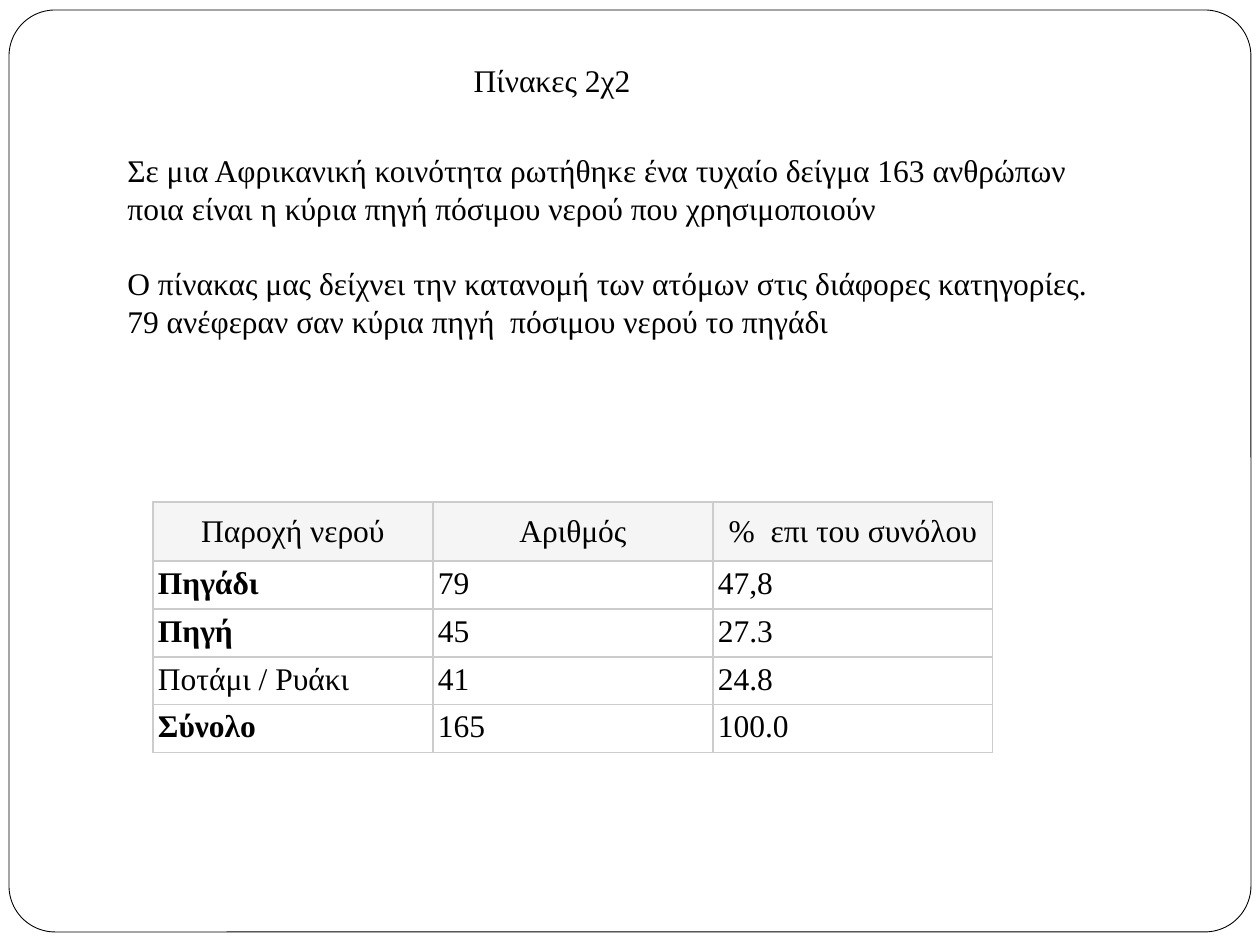
from lxml.etree import SubElement
from pptx import Presentation
from pptx.dml.color import RGBColor
from pptx.enum.shapes import MSO_SHAPE
from pptx.enum.text import MSO_ANCHOR as Anchor, MSO_AUTO_SIZE as AutoSize, PP_ALIGN as Align
from pptx.oxml.ns import qn
from pptx.util import Emu, Pt

TITLE = "Πίνακες 2χ2"
PARAGRAPHS = [
    "Σε μια Αφρικανική κοινότητα ρωτήθηκε ένα τυχαίο δείγμα 163 ανθρώπων "
    "ποια είναι η κύρια πηγή πόσιμου νερού που χρησιμοποιούν",
    "Ο πίνακας μας δείχνει την κατανομή των ατόμων στις διάφορες κατηγορίες. "
    "79 ανέφεραν σαν κύρια πηγή  πόσιμου νερού το πηγάδι",
]
WATER_SOURCES = [
    ("Παροχή νερού", "Αριθμός", "%  επι του συνόλου"),
    ("Πηγάδι", "79", "47,8"),
    ("Πηγή", "45", "27.3"),
    ("Ποτάμι / Ρυάκι", "41", "24.8"),
    ("Σύνολο", "165", "100.0"),
]
BOLD_LABELS = {"Πηγάδι", "Πηγή", "Σύνολο"}

FRAME_BOX = (9, 10, 1242, 922)
TITLE_BOX = (461, 55, 193, 51)
BODY_BOX = (115, 145, 992, 204)
TABLE_LEFT, TABLE_TOP = 153, 502
COLUMN_WIDTH, HEADER_HEIGHT, ROW_HEIGHT = 280, 59, 48
HEADER_INSET, CELL_INSET = 10, 5
BLACK, WHITE, HEADER_FILL, BORDER = "000000", "FFFFFF", "F5F5F5", "CCCCCC"


def px(length):
    return Emu(round(length * 914400 / 126))


def color(value):
    return RGBColor.from_string(value)


def place(shape, box):
    shape.left, shape.top, shape.width, shape.height = map(px, box)


def format_paragraph(paragraph, align=Align.LEFT, bold=False):
    paragraph.alignment = align
    font = paragraph.font
    font.name, font.size, font.bold = "Times New Roman", Pt(18), bold
    font.color.rgb = color(BLACK)


def set_borders(cell):
    properties = cell._tc.get_or_add_tcPr()
    for position, side in enumerate(("lnL", "lnR", "lnT", "lnB")):
        line = properties.makeelement(qn(f"a:{side}"), {"w": str(Pt(0.75))})
        fill = SubElement(line, qn("a:solidFill"))
        SubElement(fill, qn("a:srgbClr"), val=BORDER)
        properties.insert(position, line)


def add_frame(slide):
    frame = slide.shapes.add_shape(MSO_SHAPE.ROUNDED_RECTANGLE, *map(px, FRAME_BOX))
    frame.adjustments[0] = 0.05
    frame.shadow.inherit = False
    frame.fill.solid()
    frame.fill.fore_color.rgb = color(WHITE)
    frame.line.color.rgb = color(BLACK)
    frame.line.width = Pt(0.5)
    slide.shapes.title.element.addprevious(frame.element)


def add_title(slide):
    title = slide.shapes.title
    place(title, TITLE_BOX)
    text_frame = title.text_frame
    text_frame.text = TITLE
    text_frame.word_wrap = False
    text_frame.auto_size = AutoSize.SHAPE_TO_FIT_TEXT
    text_frame.vertical_anchor = Anchor.TOP
    format_paragraph(text_frame.paragraphs[0])


def add_body(slide):
    text_frame = slide.shapes.add_textbox(*map(px, BODY_BOX)).text_frame
    text_frame.text = "\n".join(PARAGRAPHS)
    text_frame.word_wrap = True
    for paragraph in text_frame.paragraphs:
        format_paragraph(paragraph)
    text_frame.paragraphs[1].space_before = Pt(21.5)


def add_water_table(slide):
    row_count, column_count = len(WATER_SOURCES), len(WATER_SOURCES[0])
    height = HEADER_HEIGHT + ROW_HEIGHT * (row_count - 1)
    box = (TABLE_LEFT, TABLE_TOP, COLUMN_WIDTH * column_count, height)
    table = slide.shapes.add_table(row_count, column_count, *map(px, box)).table
    for column in table.columns:
        column.width = px(COLUMN_WIDTH)
    for row_index, values in enumerate(WATER_SOURCES):
        header = row_index == 0
        table.rows[row_index].height = px(HEADER_HEIGHT if header else ROW_HEIGHT)
        inset = px(HEADER_INSET if header else CELL_INSET)
        for column_index, value in enumerate(values):
            cell = table.cell(row_index, column_index)
            cell.text = value
            cell.margin_left = cell.margin_right = inset
            cell.margin_top = cell.margin_bottom = inset
            cell.vertical_anchor = Anchor.MIDDLE if header else Anchor.TOP
            cell.fill.solid()
            cell.fill.fore_color.rgb = color(HEADER_FILL if header else WHITE)
            set_borders(cell)
            format_paragraph(
                cell.text_frame.paragraphs[0],
                Align.CENTER if header else Align.LEFT,
                value in BOLD_LABELS,
            )


def main():
    presentation = Presentation()
    presentation.slide_width, presentation.slide_height = px(1260), px(945)
    slide = presentation.slides.add_slide(presentation.slide_layouts[5])
    add_frame(slide)
    add_title(slide)
    add_body(slide)
    add_water_table(slide)
    presentation.save("out.pptx")


if __name__ == "__main__":
    main()
